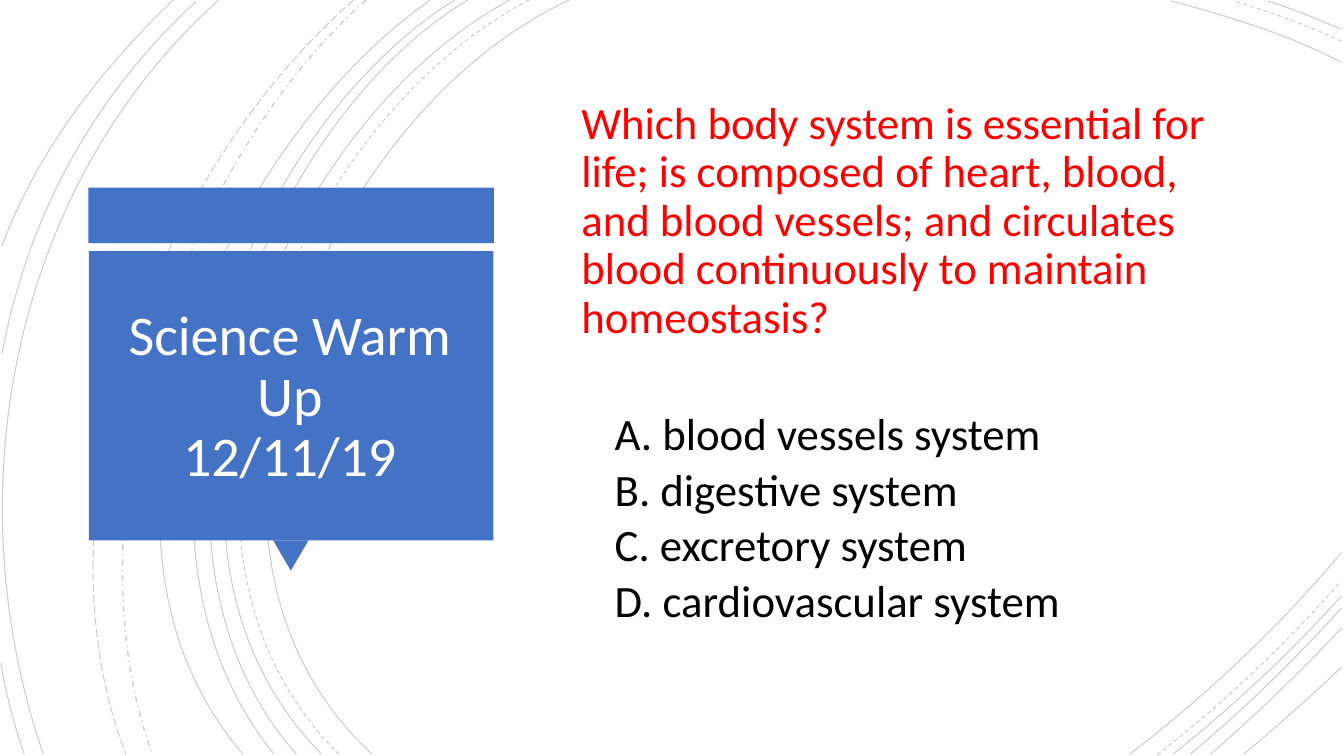
from lxml import etree
from pptx import Presentation
from pptx.dml.color import RGBColor
from pptx.enum.dml import MSO_LINE
from pptx.enum.shapes import MSO_SHAPE
from pptx.enum.text import MSO_ANCHOR, PP_ALIGN
from pptx.oxml.ns import qn
from pptx.util import Pt

SOLID, DASH = MSO_LINE.SOLID, MSO_LINE.DASH
DASH_DOT, LONG_DASH = MSO_LINE.DASH_DOT, MSO_LINE.LONG_DASH
RECTANGLE, TRIANGLE = MSO_SHAPE.RECTANGLE, MSO_SHAPE.ISOSCELES_TRIANGLE
TOP, MIDDLE = MSO_ANCHOR.TOP, MSO_ANCHOR.MIDDLE
LEFT, CENTER = PP_ALIGN.LEFT, PP_ALIGN.CENTER
BLACK = RGBColor(0x00, 0x00, 0x00)
WHITE = RGBColor(0xFF, 0xFF, 0xFF)
RED = RGBColor(0xFF, 0x00, 0x00)
BLUE = RGBColor(0x44, 0x72, 0xC4)
FONT = "Calibri"
ARC_ALPHA = "20000"

TITLE = "Science Warm Up\v12/11/19"
QUESTION = (
    "Which body system is essential for life; is composed of heart, blood, "
    "and blood vessels; and circulates blood continuously to maintain homeostasis?"
)
ANSWERS = [
    "A. blood vessels system",
    "B. digestive system",
    "C. excretory system",
    "D. cardiovascular system",
]

ARCS = [
    ((406.8, 0), (226.8, 82.8), (103, 388.8), (265.7, 538.6), SOLID),
    ((958.3, 44.6), (920.2, 24.5), (877, 11.5), (836.6, 0.7), SOLID),
    ((807.1, 538.6), (861.8, 496.8), (913.7, 447.8), (958.3, 394.6), SOLID),
    ((378, 0), (205.2, 90), (88.6, 386.6), (241.9, 538.6), DASH),
    ((958.3, 29.5), (933.8, 18), (907.2, 8.6), (882, 0.7), DASH),
    ((826.6, 539.3), (873.4, 502.6), (918, 460.8), (957.6, 415.4), DASH),
    ((364.3, 0), (194.4, 91.4), (79.2, 386.6), (229.7, 538.6), SOLID),
    ((958.3, 20.9), (941, 13.7), (923.8, 6.5), (905.8, 0.7), SOLID),
    ((838.1, 538.6), (880.6, 504.7), (921.6, 466.6), (958.3, 425.5), SOLID),
    ((334.1, 0), (175.7, 95.8), (79.2, 389.5), (211.7, 538.6), SOLID),
    ((850.3, 538.6), (888.5, 506.9), (924.5, 471.6), (958.3, 434.2), SOLID),
    ((324.7, 0), (166.3, 99.4), (69.8, 383.8), (195.8, 538.6), SOLID),
    ((864.7, 538.6), (897.1, 510.5), (928.8, 480.2), (958.3, 448.6), SOLID),
    ((307.4, 0), (156.2, 105.8), (38.2, 380.9), (173.5, 538.6), SOLID),
    ((888.5, 538.6), (912.2, 519.1), (935.3, 498.2), (958.3, 476.6), SOLID),
    ((261.4, 0), (126.7, 119.5), (46.8, 366.5), (108.7, 538.6), DASH_DOT),
    ((252.7, 0), (113, 121.7), (20.9, 359.3), (90, 538.6), LONG_DASH),
    ((156.2, 0), (7.9, 133.2), (-33.1, 352.8), (31, 538.6), SOLID),
    ((140.4, 0.7), (66.2, 69.1), (20.2, 154.1), (1.4, 252.7), SOLID),
    ((0.7, 473.8), (4.3, 496.1), (10.1, 517.7), (17.3, 538.6), SOLID),
    ((123.8, 0), (72, 49.7), (26.6, 108), (1.4, 175.7), SOLID),
]
CALLOUT = [
    (RECTANGLE, (63.2, 134, 289.6, 39.7), 0),
    (TRIANGLE, (195.1, 386, 25.2, 21.6), 180),
    (RECTANGLE, (63.5, 179.4, 288.9, 206.6), 0),
]


def add_arc(page, start, first_control, second_control, end, dash):
    begin, *rest = [(Pt(x), Pt(y)) for x, y in (start, first_control, second_control, end)]
    builder = page.shapes.build_freeform(*begin)
    builder.add_line_segments(rest, close=False)
    arc = builder.convert_to_shape()
    arc.shadow.inherit = False
    arc.fill.background()
    arc.line.color.rgb = BLACK
    arc.line.width = Pt(1 if dash == DASH_DOT else 0.75)
    arc.line.dash_style = dash
    color = arc._element.xpath(".//a:ln//a:srgbClr")[0]
    etree.SubElement(color, qn("a:alpha")).set("val", ARC_ALPHA)
    outline = arc._element.xpath(".//a:path")[0]
    curve = etree.SubElement(outline, qn("a:cubicBezTo"))
    for segment in outline.findall(qn("a:lnTo")):
        curve.append(segment[0])
        outline.remove(segment)


def add_block(page, kind, frame, rotation):
    block = page.shapes.add_shape(kind, *map(Pt, frame))
    block.rotation = rotation
    block.shadow.inherit = False
    block.fill.solid()
    block.fill.fore_color.rgb = BLUE
    block.line.fill.background()


def add_text(page, frame, anchor, margin_top, lines):
    box = page.shapes.add_textbox(*map(Pt, frame))
    text_frame = box.text_frame
    text_frame.word_wrap = True
    text_frame.vertical_anchor = anchor
    text_frame.margin_top = Pt(margin_top)
    for index, (text, size, color, align, indent, before) in enumerate(lines):
        para = text_frame.add_paragraph() if index else text_frame.paragraphs[0]
        para.text = text
        para.alignment = align
        para.line_spacing = 0.9
        para.space_before = Pt(before)
        para._p.get_or_add_pPr().set("marL", str(Pt(indent)))
        for span in para.runs:
            span.font.name = FONT
            span.font.size = Pt(size)
            span.font.color.rgb = color


def main():
    deck = Presentation()
    deck.slide_width, deck.slide_height = Pt(960), Pt(540)
    page = deck.slides.add_slide(deck.slide_layouts[6])
    for arc in ARCS:
        add_arc(page, *arc)
    for block in CALLOUT:
        add_block(page, *block)
    add_text(page, (71.3, 190.1, 271.4, 188.6), MIDDLE, 3.6,
             [(TITLE, 40, WHITE, CENTER, 0, 0)])
    body = [(QUESTION, 32, RED, LEFT, 5, 0)]
    for index, answer in enumerate(ANSWERS):
        body.append((answer, 32, BLACK, LEFT, 28.8, 5 if index else 49.5))
    add_text(page, (403.2, 63.4, 494.6, 413.3), TOP, 8.6, body)
    deck.save("out.pptx")


if __name__ == "__main__":
    main()
